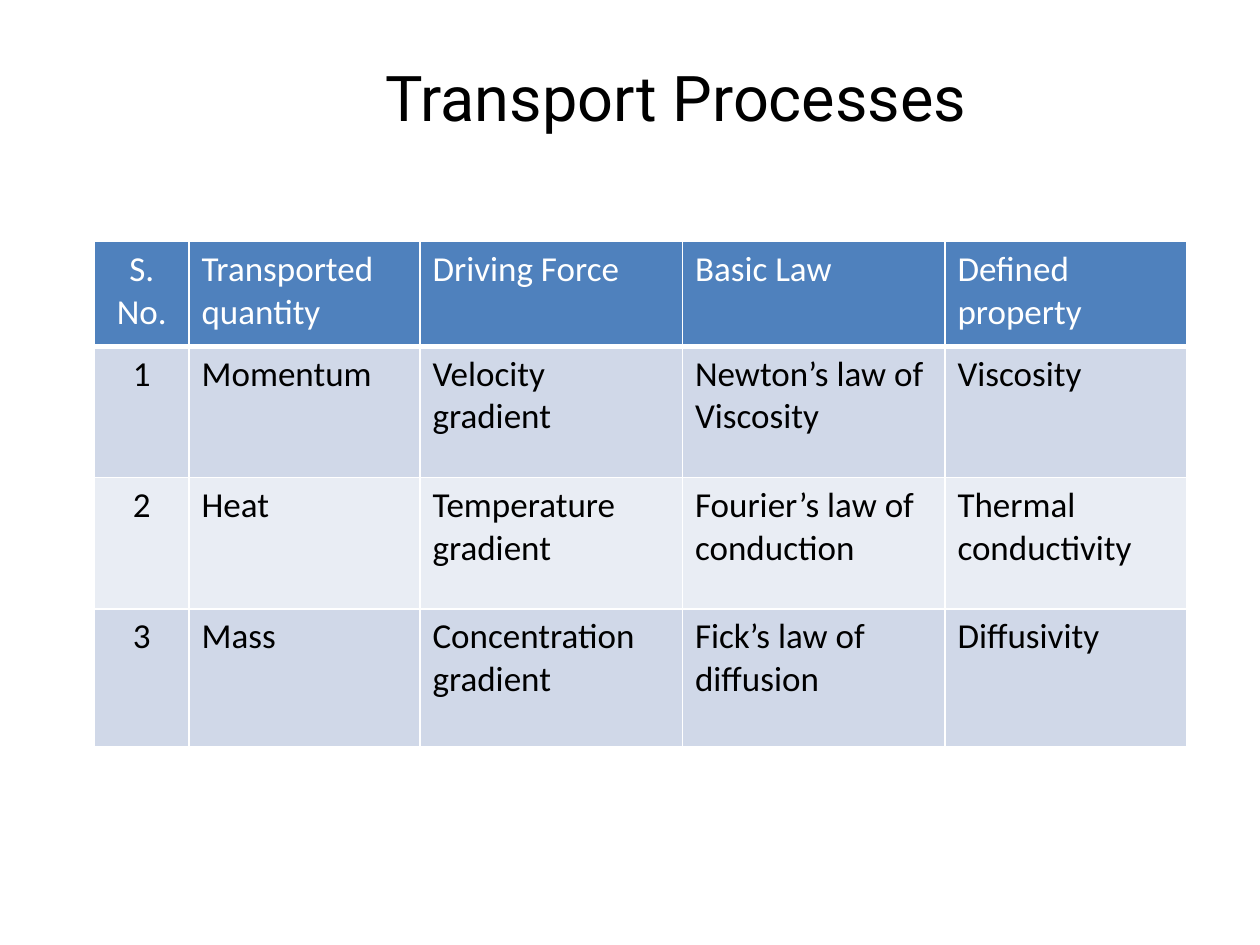
from dataclasses import dataclass

from lxml import etree
from pptx import Presentation
from pptx import util as u
from pptx.dml.color import RGBColor
from pptx.enum import text
from pptx.oxml import ns

PX = 9525


@dataclass(frozen=True)
class Theme:
    title_font: str = "Roboto"
    body_font: str = "Calibri"
    title_size: int = 36
    body_size: int = 20
    ink: str = "000000"
    white: str = "FFFFFF"
    header: str = "4F81BD"
    bands: tuple = ("D0D8E8", "E9EDF4")
    rule: int = 1
    header_rule: int = 3


class PageBuilder:
    """Draws styled elements on the current slide, with lengths in px."""

    def __init__(self, deck, theme):
        self.theme = theme
        self.page = deck.slides.add_slide(deck.slide_layouts[6])

    def add_span(self, para, words, font, size, color, centred):
        para.alignment = text.PP_ALIGN.CENTER if centred else text.PP_ALIGN.LEFT
        span = para.add_run()
        span.text = words
        span.font.name = font
        span.font.size = u.Pt(size)
        span.font.bold = False
        span.font.color.rgb = RGBColor.from_string(color)

    def title(self, words, left, top, width, height):
        box = self.page.shapes.add_textbox(*(n * PX for n in (left, top, width, height)))
        frame = box.text_frame
        frame.word_wrap = False
        frame.auto_size = text.MSO_AUTO_SIZE.SHAPE_TO_FIT_TEXT
        theme = self.theme
        self.add_span(frame.paragraphs[0], words, theme.title_font, theme.title_size, theme.ink, True)

    def borders(self, cell, bottom):
        properties = cell._tc.get_or_add_tcPr()
        for side in "LRTB":
            points = bottom if side == "B" else self.theme.rule
            line = etree.SubElement(properties, ns.qn(f"a:ln{side}"), w=str(u.Pt(points)))
            fill = etree.SubElement(line, ns.qn("a:solidFill"))
            etree.SubElement(fill, ns.qn("a:srgbClr"), val=self.theme.white)

    def table(self, rows, left, top, widths, heights):
        theme = self.theme
        extent = (left, top, sum(widths), sum(heights))
        grid = self.page.shapes.add_table(len(rows), len(widths), *(n * PX for n in extent)).table
        for column, width in zip(grid.columns, widths):
            column.width = width * PX
        for index, (row, height, entries) in enumerate(zip(grid.rows, heights, rows)):
            row.height = height * PX
            is_header = index == 0
            fill = theme.header if is_header else theme.bands[(index - 1) % 2]
            color = theme.white if is_header else theme.ink
            for number, (cell, words) in enumerate(zip(row.cells, entries)):
                self.borders(cell, theme.header_rule if is_header else theme.rule)
                cell.fill.solid()
                cell.fill.fore_color.rgb = RGBColor.from_string(fill)
                para = cell.text_frame.paragraphs[0]
                self.add_span(para, words, theme.body_font, theme.body_size, color, number == 0)


PROCESSES = [
    ("S. No.", "Transported quantity", "Driving Force", "Basic Law", "Defined property"),
    ("1", "Momentum", "Velocity gradient", "Newton’s law of Viscosity", "Viscosity"),
    ("2", "Heat", "Temperature gradient", "Fourier’s law of conduction", "Thermal conductivity"),
    ("3", "Mass", "Concentration gradient", "Fick’s law of diffusion", "Diffusivity"),
]


def main():
    deck = Presentation()
    deck.slide_width, deck.slide_height = 960 * PX, 720 * PX
    builder = PageBuilder(deck, Theme())
    builder.table(PROCESSES, 72, 184, (72, 176, 200, 200, 184), (80, 100, 100, 105))
    builder.title("Transport Processes", 200, 40, 630, 68)
    deck.save("out.pptx")


if __name__ == "__main__":
    main()
